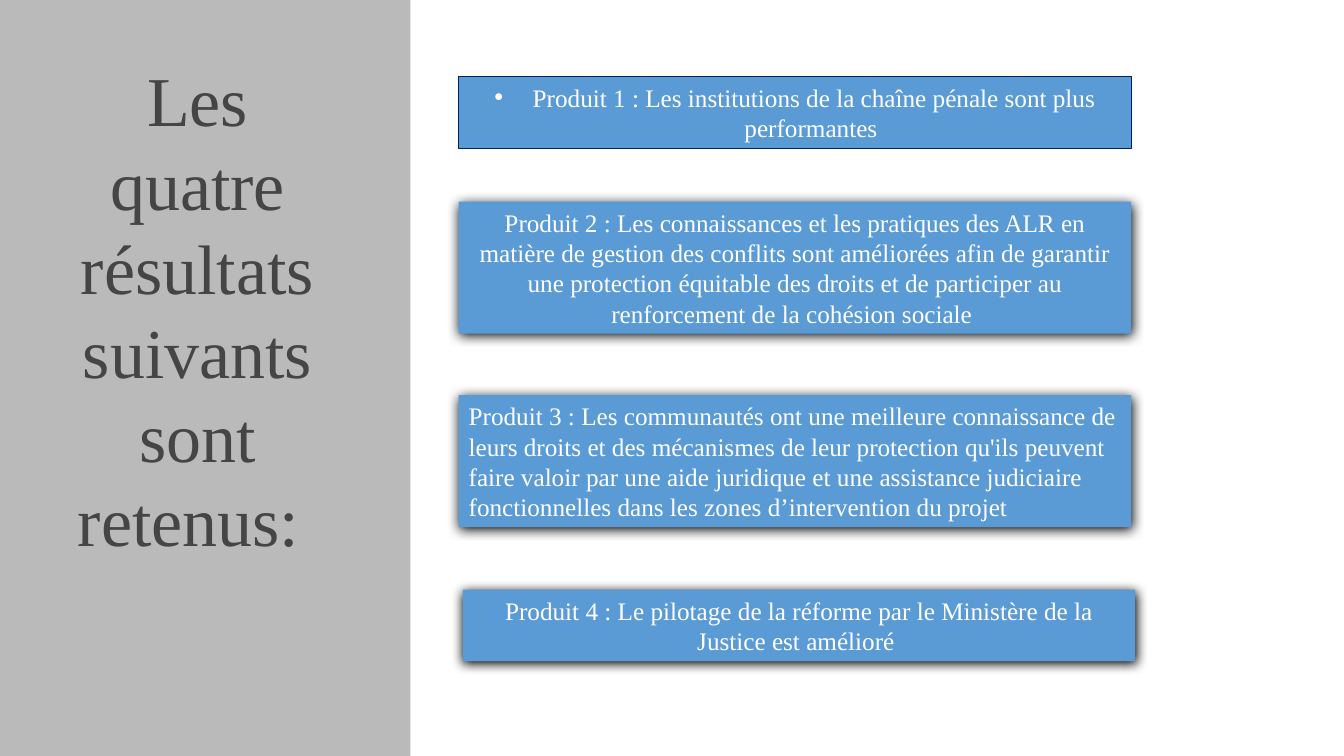
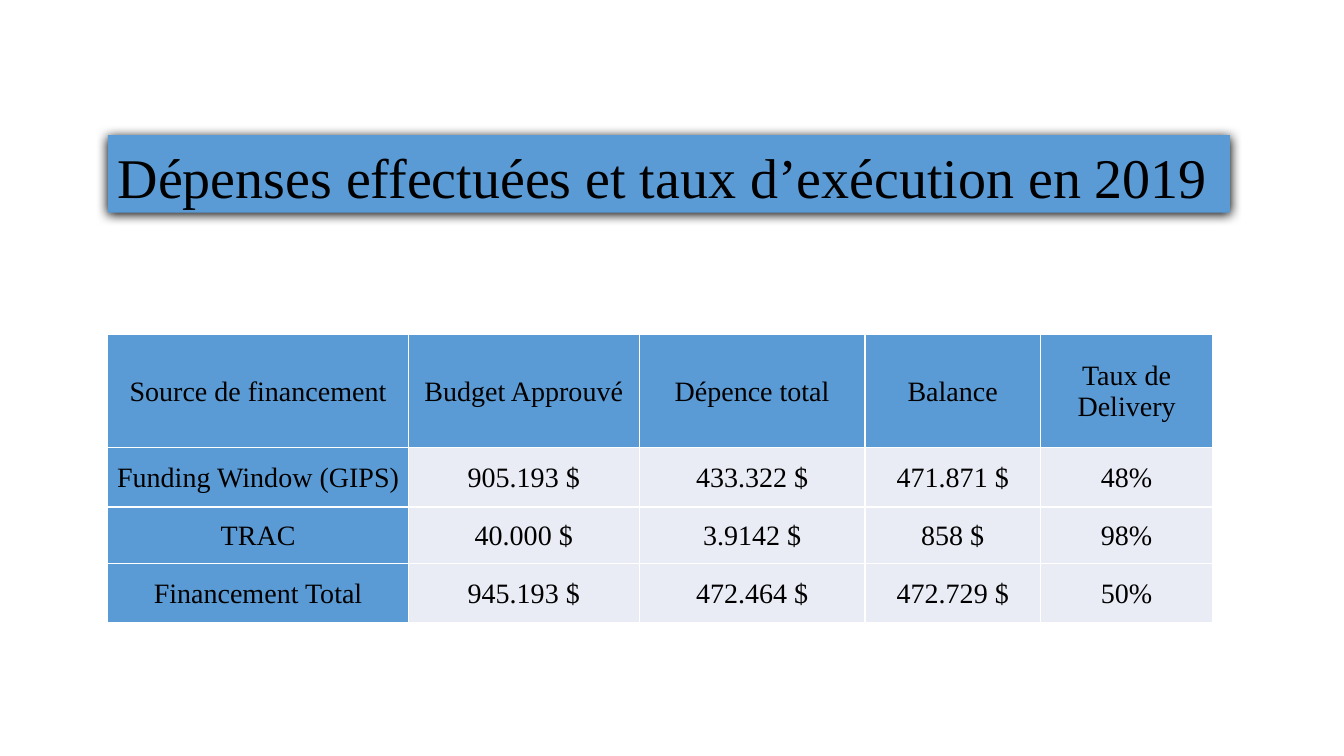
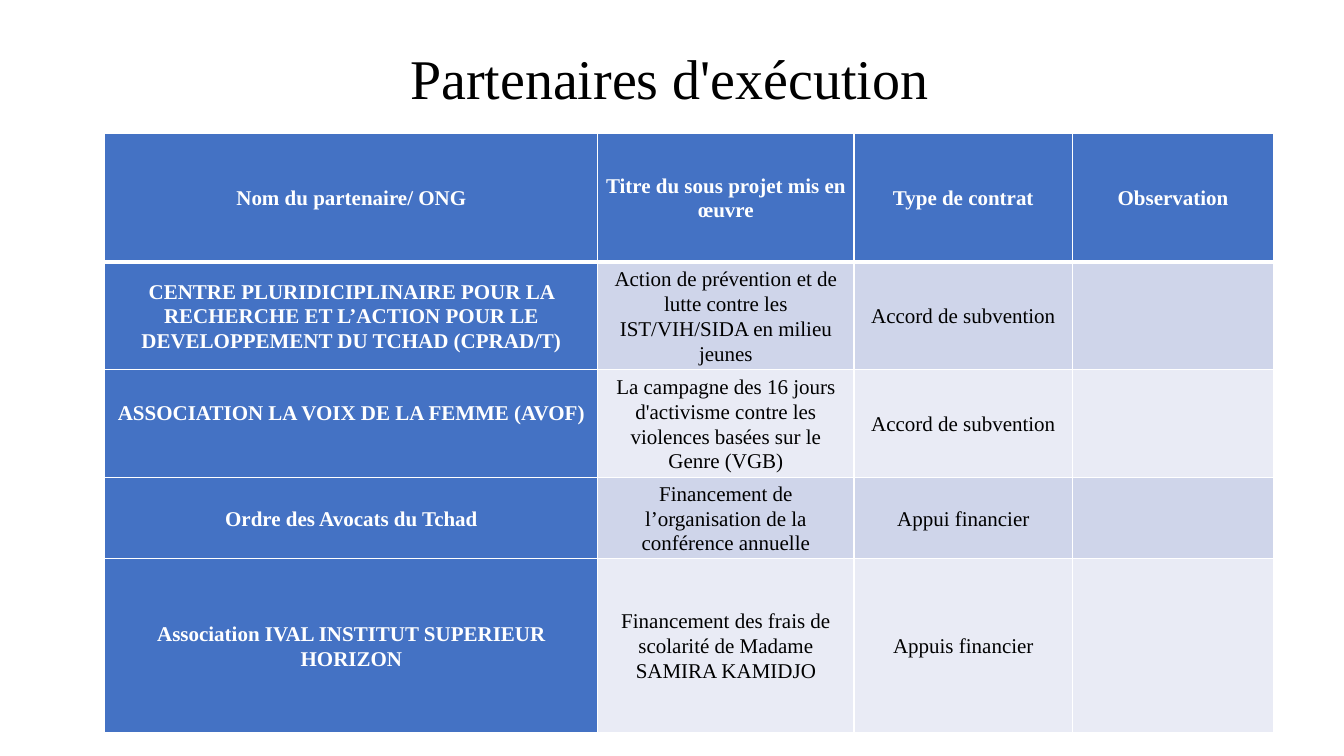
from dataclasses import dataclass
from typing import Optional

from lxml.etree import SubElement
from pptx import Presentation
from pptx.dml.color import RGBColor
from pptx.enum.shapes import MSO_SHAPE
from pptx.enum.text import MSO_ANCHOR, PP_ALIGN
from pptx.oxml.ns import qn
from pptx.util import Inches, Pt

BLACK = RGBColor(0, 0, 0)
WHITE = RGBColor(0xFF, 0xFF, 0xFF)
BLUE = RGBColor(0x5B, 0x9B, 0xD5)
NAVY = RGBColor(0x00, 0x20, 0x60)
ROYAL = RGBColor(0x44, 0x72, 0xC4)
GRAY = RGBColor(0x80, 0x80, 0x80)
DARK = RGBColor(0xCF, 0xD5, 0xEA)
PALE = RGBColor(0xE9, 0xEB, 0xF5)
FONT = "Times New Roman"


@dataclass
class Box:
    left: float
    top: float
    width: float
    height: float

    def place(self) -> tuple:
        return tuple(Inches(v) for v in (self.left, self.top, self.width, self.height))


@dataclass
class Style:
    size: float
    color: RGBColor
    align: PP_ALIGN = PP_ALIGN.CENTER
    bold: bool = False
    space: float = 1
    after: float = 0


@dataclass
class Product:
    box: Box
    text: str
    align: PP_ALIGN = PP_ALIGN.CENTER
    bullet: bool = False


@dataclass
class Grid:
    left: float
    top: float
    cols: list[float]
    rows: list[float]
    head: RGBColor
    bands: tuple[RGBColor, RGBColor]
    label: Style
    body: Style
    side: float
    edge: float
    rule: float
    texts: list[list[str]]


CARD = Style(18, WHITE)
SIDE = Style(50, BLACK)
TITLE = Style(40, BLACK, PP_ALIGN.LEFT, space=1.07, after=8)
PLAIN = Style(20, BLACK)

PRODUCTS = [
    Product(Box(4.55, 0.76, 6.67, 0.71),
            "Produit 1 : Les institutions de la chaîne pénale sont plus performantes ",
            bullet=True),
    Product(Box(4.55, 2, 6.67, 1.31),
            "Produit 2 : Les connaissances et les pratiques des ALR en matière de gestion "
            "des conflits sont améliorées afin de garantir une protection équitable des "
            "droits et de participer au renforcement de la cohésion sociale "),
    Product(Box(4.55, 3.92, 6.67, 1.31),
            "Produit 3 : Les communautés ont une meilleure connaissance de leurs droits et "
            "des mécanismes de leur protection qu'ils peuvent faire valoir par une aide "
            "juridique et une assistance judiciaire fonctionnelles dans les zones "
            "d’intervention du projet", PP_ALIGN.LEFT),
    Product(Box(4.59, 5.85, 6.67, 0.71),
            "Produit 4 : Le pilotage de la réforme par le Ministère de la Justice est amélioré "),
]

BUDGET = Grid(
    1.07, 3.32, [2.98, 2.29, 2.24, 1.74, 1.71], [1.12, 0.59, 0.56, 0.59],
    BLUE, (PALE, PALE), PLAIN, PLAIN, 0.01, 0.01, 1,
    [["Source de financement", "Budget Approuvé", "Dépence total", "Balance", "Taux de Delivery"],
     ["Funding Window (GIPS)", "905.193 $", "433.322 $", "471.871 $", "48%"],
     ["TRAC", "40.000 $", "3.9142 $", "858 $", "98%"],
     ["Financement Total", "945.193 $", "472.464 $", "472.729 $", "50%"]])

PARTNERS = Grid(
    1.04, 1.32, [4.89, 2.54, 2.17, 1.99], [1.28, 1.07, 1.07, 0.8, 1.73],
    ROYAL, (DARK, PALE), Style(15, WHITE, bold=True, space=1.07),
    Style(15, BLACK, space=1.07), 0.07, 0, 3,
    [["Nom du partenaire/ ONG", "Titre du sous projet mis en œuvre", "Type de contrat",
      "Observation"],
     ["CENTRE PLURIDICIPLINAIRE POUR LA RECHERCHE ET L’ACTION POUR LE DEVELOPPEMENT "
      "DU TCHAD (CPRAD/T)",
      "Action de prévention et de lutte contre les IST/VIH/SIDA en milieu jeunes",
      "Accord de subvention", ""],
     ["ASSOCIATION LA VOIX DE LA FEMME (AVOF)",
      "La campagne des 16 jours d'activisme contre les violences basées sur le Genre (VGB)",
      "Accord de subvention", ""],
     ["Ordre des Avocats du Tchad",
      "Financement de l’organisation de la conférence annuelle", "Appui financier", ""],
     ["Association IVAL INSTITUT SUPERIEUR HORIZON",
      "Financement des frais de scolarité de Madame SAMIRA KAMIDJO", "Appuis financier", ""]])


def write(frame, text: str, style: Style) -> None:
    frame.word_wrap = True
    para = frame.paragraphs[0]
    para.alignment = style.align
    para.line_spacing = style.space
    para.space_after = Pt(style.after)
    run = para.add_run()
    run.text = text
    run.font.name = FONT
    run.font.size = Pt(style.size)
    run.font.bold = style.bold
    run.font.color.rgb = style.color


def tint(parent, color: RGBColor, alpha: Optional[int] = None) -> None:
    node = SubElement(parent, qn("a:srgbClr"), val=str(color))
    if alpha is not None:
        SubElement(node, qn("a:alpha"), val=str(alpha * 1000))


def add_rect(slide, box: Box, color: RGBColor, line: Optional[RGBColor] = None):
    rect = slide.shapes.add_shape(MSO_SHAPE.RECTANGLE, *box.place())
    rect.shadow.inherit = False
    rect.fill.solid()
    rect.fill.fore_color.rgb = color
    if line is None:
        rect.line.fill.background()
    else:
        rect.line.color.rgb = line
        rect.line.width = Pt(0.75)
    return rect


def add_glow(rect) -> None:
    effects = rect.element.spPr.find(qn("a:effectLst"))
    glow = SubElement(effects, qn("a:outerShdw"), blurRad=str(Pt(8.5)), dist=str(Pt(1)),
                      dir="5400000", algn="ctr", rotWithShape="0")
    tint(glow, BLACK)


def add_bullet(para) -> None:
    props = para._p.get_or_add_pPr()
    props.set("marL", str(Inches(0.38)))
    props.set("indent", str(-Inches(0.38)))
    SubElement(props, qn("a:buFont"), typeface="Arial")
    SubElement(props, qn("a:buChar"), char="•")


def add_card(slide, item: Product) -> None:
    rect = add_rect(slide, item.box, BLUE, NAVY if item.bullet else None)
    if not item.bullet:
        add_glow(rect)
    write(rect.text_frame, item.text, Style(CARD.size, CARD.color, item.align))
    if item.bullet:
        add_bullet(rect.text_frame.paragraphs[0])


def add_text(slide, box: Box, text: str, style: Style) -> None:
    write(slide.shapes.add_textbox(*box.place()).text_frame, text, style)


def add_edges(cell, base: float) -> None:
    props = cell._tc.get_or_add_tcPr()
    for tag, width in (("lnL", 1), ("lnR", 1), ("lnT", 1), ("lnB", base)):
        edge = SubElement(props, qn(f"a:{tag}"), w=str(Pt(width)))
        tint(SubElement(edge, qn("a:solidFill")), WHITE)


def add_grid(slide, grid: Grid):
    box = Box(grid.left, grid.top, sum(grid.cols), sum(grid.rows))
    table = slide.shapes.add_table(len(grid.rows), len(grid.cols), *box.place()).table
    table.first_row = table.horz_banding = False
    for col, width in zip(table.columns, grid.cols):
        col.width = Inches(width)
    for row, height in zip(table.rows, grid.rows):
        row.height = Inches(height)
    for r, texts in enumerate(grid.texts):
        for c, text in enumerate(texts):
            cell = table.cell(r, c)
            head = r == 0 or c == 0
            add_edges(cell, grid.rule if r == 0 else 1)
            cell.fill.solid()
            cell.fill.fore_color.rgb = grid.head if head else grid.bands[(r - 1) % 2]
            cell.vertical_anchor = MSO_ANCHOR.MIDDLE
            cell.margin_left = cell.margin_right = Inches(grid.side)
            cell.margin_top = Inches(grid.edge)
            cell.margin_bottom = Inches(0)
            if text:
                write(cell.text_frame, text, grid.label if head else grid.body)
    return table


def draw_results(slide) -> None:
    for item in PRODUCTS:
        add_card(slide, item)
    add_text(slide, Box(0.64, 0.51, 2.64, 5.15),
             "Les quatre résultats suivants sont retenus: ", SIDE)
    panel = add_rect(slide, Box(0, -0.03, 4.07, 7.55), GRAY)
    fill = panel.element.spPr.find(qn("a:solidFill"))
    fill.clear()
    tint(fill, GRAY, 54)


def draw_budget(slide) -> None:
    add_grid(slide, BUDGET)
    band = add_rect(slide, Box(1.07, 1.34, 11.13, 0.77), BLUE)
    add_glow(band)
    write(band.text_frame, "Dépenses effectuées et taux d’exécution en 2019", TITLE)


def draw_partners(slide) -> None:
    add_text(slide, Box(3.97, 0.34, 5.4, 0.77), "Partenaires d'exécution", TITLE)
    table = add_grid(slide, PARTNERS)
    table.cell(2, 0).margin_bottom = Inches(0.23)


def main() -> None:
    deck = Presentation()
    deck.slide_width = Inches(13.33)
    deck.slide_height = Inches(7.5)
    for draw in (draw_results, draw_budget, draw_partners):
        draw(deck.slides.add_slide(deck.slide_layouts[6]))
    deck.save("out.pptx")


if __name__ == "__main__":
    main()
